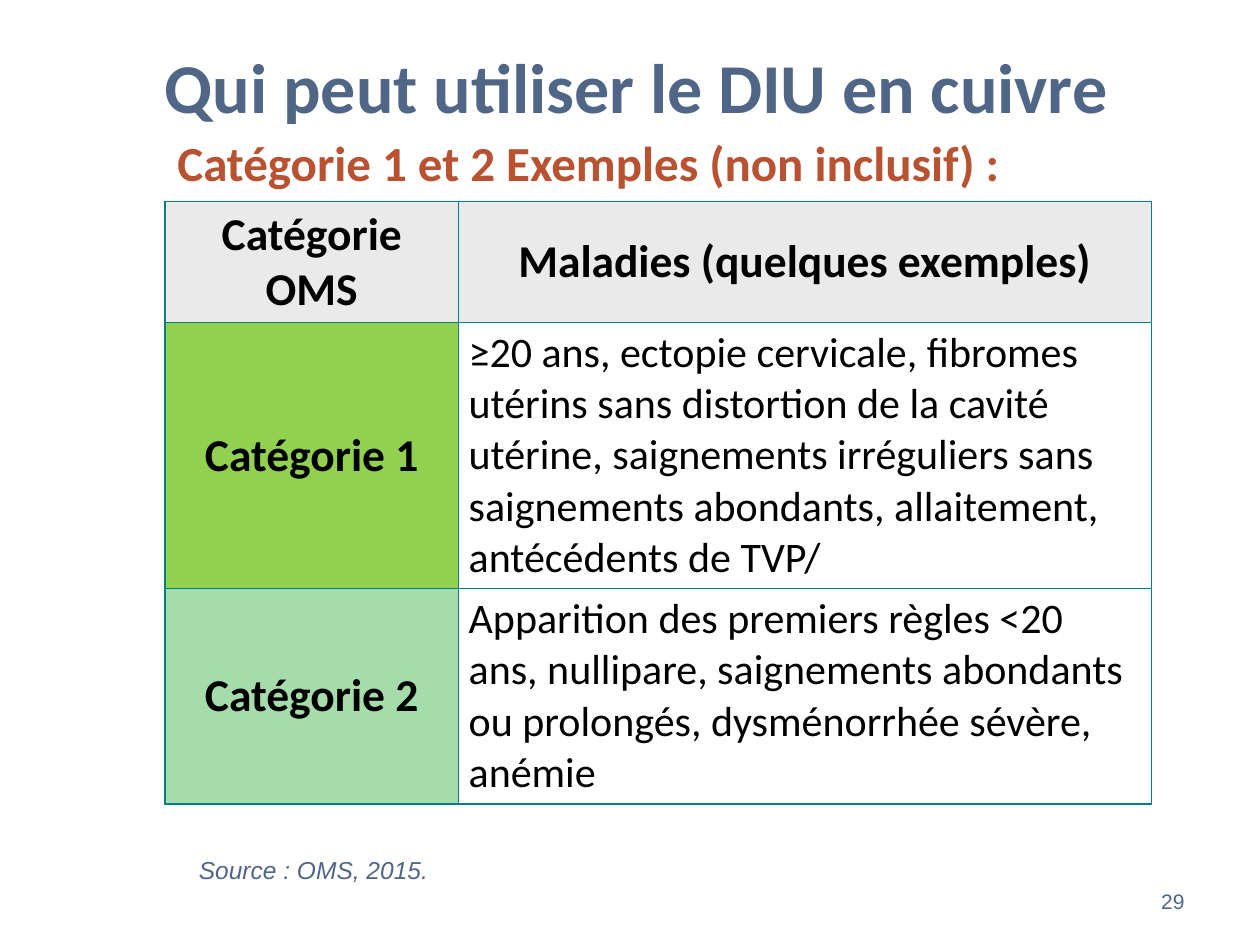
from lxml.etree import SubElement
from pptx import Presentation
from pptx.dml.color import RGBColor
from pptx.enum.text import MSO_ANCHOR, PP_ALIGN
from pptx.oxml.ns import qn
from pptx.util import Inches, Pt

SLATE = RGBColor(0x50, 0x66, 0x87)
RUST = RGBColor(0xB8, 0x52, 0x31)
BLACK = RGBColor(0x00, 0x00, 0x00)
TEAL = RGBColor(0x00, 0x80, 0x80)
HEADER_GREY = RGBColor(0xEA, 0xEA, 0xEA)
GREEN = RGBColor(0x92, 0xD0, 0x50)
PALE_GREEN = RGBColor(0xA6, 0xDB, 0xAB)

COLUMN_WIDTHS = (2.33, 5.5)
ROW_HEIGHTS = (0.96, 2.11, 1.71)
# Each row: left text, left fill, right text, right fill
ROWS = (
    ("Catégorie OMS", HEADER_GREY, "Maladies (quelques exemples)", HEADER_GREY),
    ("Catégorie 1", GREEN,
     "≥20 ans, ectopie cervicale, fibromes utérins sans distortion de la cavité "
     "utérine, saignements irréguliers sans saignements abondants, allaitement, "
     "antécédents de TVP/", None),
    ("Catégorie 2", PALE_GREEN,
     "Apparition des premiers règles <20 ans, nullipare, saignements abondants "
     "ou prolongés, dysménorrhée sévère, anémie", None),
)


def style_paragraph(paragraph, size, color, name="Calibri", bold=False,
                    italic=False, align=PP_ALIGN.LEFT, spacing=1.0):
    paragraph.alignment = align
    paragraph.line_spacing = spacing
    font = paragraph.font
    font.name, font.size = name, Pt(size)
    font.bold, font.italic = bold, italic
    font.color.rgb = color


def add_text(slide, box, text, size, color, anchor=MSO_ANCHOR.MIDDLE, **style):
    shape = slide.shapes.add_textbox(*map(Inches, box))
    frame = shape.text_frame
    frame.word_wrap = True
    frame.vertical_anchor = anchor
    frame.text = text
    style_paragraph(frame.paragraphs[0], size, color, **style)


def set_borders(cell, color, width):
    properties = cell._tc.get_or_add_tcPr()
    for position, side in enumerate(("a:lnL", "a:lnR", "a:lnT", "a:lnB")):
        line = SubElement(properties, qn(side), w=str(Pt(width)))
        fill = SubElement(line, qn("a:solidFill"))
        SubElement(fill, qn("a:srgbClr"), val=str(color))
        properties.insert(position, line)


def fill_cell(cell, text, fill, is_heading):
    cell.text = text
    cell.vertical_anchor = MSO_ANCHOR.MIDDLE
    cell.margin_left = cell.margin_right = Inches(0.08)
    cell.margin_top = cell.margin_bottom = Inches(0.04)
    if fill is None:
        cell.fill.background()
    else:
        cell.fill.solid()
        cell.fill.fore_color.rgb = fill
    set_borders(cell, TEAL, 1)
    style_paragraph(cell.text_frame.paragraphs[0], 26 if is_heading else 24,
                    BLACK, bold=is_heading,
                    align=PP_ALIGN.CENTER if is_heading else PP_ALIGN.LEFT)


def add_category_table(slide, left, top):
    table = slide.shapes.add_table(
        len(ROW_HEIGHTS), len(COLUMN_WIDTHS), Inches(left), Inches(top),
        Inches(sum(COLUMN_WIDTHS)), Inches(sum(ROW_HEIGHTS))).table
    for column, width in zip(table.columns, COLUMN_WIDTHS):
        column.width = Inches(width)
    for index, (row, height) in enumerate(zip(table.rows, ROW_HEIGHTS)):
        row.height = Inches(height)
        label, label_fill, content, content_fill = ROWS[index]
        fill_cell(row.cells[0], label, label_fill, True)
        fill_cell(row.cells[1], content, content_fill, index == 0)


def add_heading(slide, left):
    add_text(slide, (0.3, 0.05, 9.5, 1.25), "Qui peut utiliser le DIU en cuivre",
             40, SLATE, bold=True, align=PP_ALIGN.CENTER)
    add_text(slide, (left, 0.92, 7.63, 0.77),
             "Catégorie 1 et 2 Exemples (non inclusif) :",
             28, RUST, bold=True, spacing=0.95)


def add_footer(slide):
    add_text(slide, (1.48, 6.76, 2.1, 0.3), "Source : OMS, 2015.", 14, SLATE,
             anchor=MSO_ANCHOR.TOP, name="Arial", italic=True, spacing=0.9)
    add_text(slide, (7.17, 6.95, 2.33, 0.4), "29", 12, SLATE,
             name="Arial", align=PP_ALIGN.RIGHT)


def main():
    presentation = Presentation()
    presentation.slide_width, presentation.slide_height = Inches(10), Inches(7.5)
    slide = presentation.slides.add_slide(presentation.slide_layouts[6])
    content_left = 1.31
    add_heading(slide, content_left)
    add_category_table(slide, content_left, 1.6)
    add_footer(slide)
    presentation.save("out.pptx")


if __name__ == "__main__":
    main()
